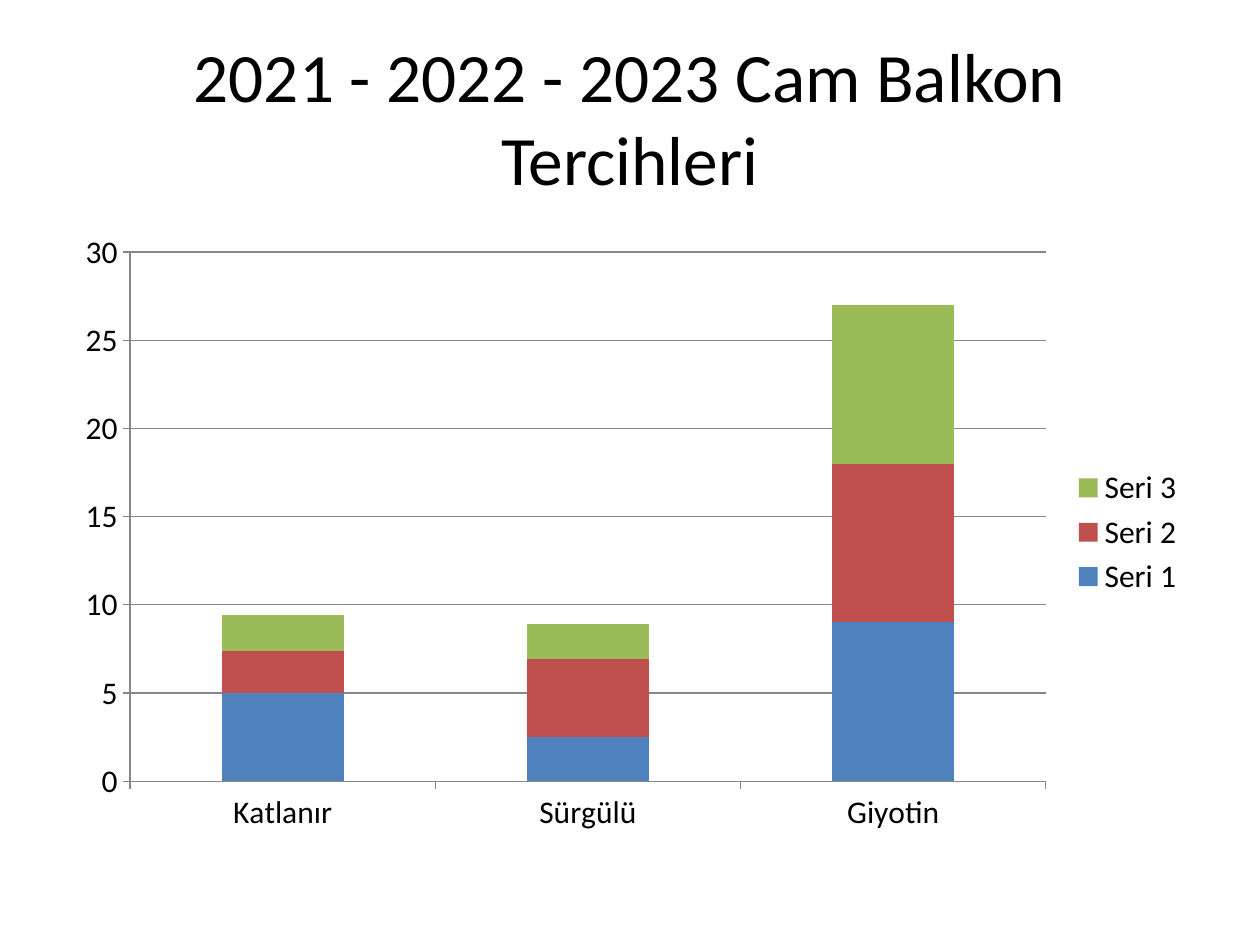
from dataclasses import dataclass

from pptx import Presentation
from pptx.chart.data import CategoryChartData
from pptx.dml.color import RGBColor
from pptx.enum import chart as ch, text
from pptx.util import Pt

TITLE = "2021 - 2022 - 2023 Cam Balkon Tercihleri"
BALCONY_TYPES = ["Katlanır", "Sürgülü", "Giyotin"]
PREFERENCES = {
    "Seri 1": (5, 2.5, 9),
    "Seri 2": (2.4, 4.4, 9),
    "Seri 3": (2, 2, 9),
}


@dataclass(frozen=True)
class Theme:
    font: str = "Calibri"
    title_size: float = 39.6
    chart_size: float = 18
    ink: str = "000000"
    line: str = "878787"
    series: tuple = ("4F81BD", "C0504D", "9BBB59")


THEME = Theme()
SLIDE_WIDTH, SLIDE_HEIGHT = 720, 540
MARGIN = 36
CONTENT_WIDTH = SLIDE_WIDTH - 2 * MARGIN
TITLE_BOX = [Pt(v) for v in (MARGIN, 21.6, CONTENT_WIDTH, 90)]
CHART_BOX = [Pt(v) for v in (MARGIN, 126, CONTENT_WIDTH, 356.4)]


def style_font(font, size):
    font.name = THEME.font
    font.size = Pt(size)
    font.color.rgb = RGBColor.from_string(THEME.ink)


def style_line(line):
    line.color.rgb = RGBColor.from_string(THEME.line)
    line.width = Pt(0.75)


def add_title(slide):
    title = slide.shapes.title
    title.left, title.top, title.width, title.height = TITLE_BOX
    frame = title.text_frame
    frame.text = TITLE
    frame.word_wrap = True
    frame.auto_size = text.MSO_AUTO_SIZE.NONE
    frame.vertical_anchor = text.MSO_ANCHOR.MIDDLE
    heading = frame.paragraphs[0]
    heading.alignment = text.PP_ALIGN.CENTER
    style_font(heading.font, THEME.title_size)


def add_preferences_chart(slide):
    data = CategoryChartData()
    data.categories = BALCONY_TYPES
    for name, values in PREFERENCES.items():
        data.add_series(name, values)
    chart = slide.shapes.add_chart(
        ch.XL_CHART_TYPE.COLUMN_STACKED, *CHART_BOX, data).chart
    chart.has_title = False
    style_font(chart.font, THEME.chart_size)

    chart.has_legend = True
    chart.legend.position = ch.XL_LEGEND_POSITION.RIGHT
    chart.legend.include_in_layout = False

    for axis in (chart.category_axis, chart.value_axis):
        axis.major_tick_mark = ch.XL_TICK_MARK.OUTSIDE
        axis.minor_tick_mark = ch.XL_TICK_MARK.NONE
        style_line(axis.format.line)
    scale = chart.value_axis
    scale.minimum_scale, scale.maximum_scale, scale.major_unit = 0, 30, 5
    scale.has_major_gridlines = True
    style_line(scale.major_gridlines.format.line)

    columns = chart.plots[0]
    columns.gap_width = 150
    columns.overlap = 100
    columns.vary_by_categories = False
    for series, color in zip(columns.series, THEME.series):
        series.format.fill.solid()
        series.format.fill.fore_color.rgb = RGBColor.from_string(color)


def main():
    deck = Presentation()
    deck.slide_width, deck.slide_height = Pt(SLIDE_WIDTH), Pt(SLIDE_HEIGHT)
    slide = deck.slides.add_slide(deck.slide_layouts.get_by_name("Title Only"))
    add_title(slide)
    add_preferences_chart(slide)
    deck.save("out.pptx")


if __name__ == "__main__":
    main()
